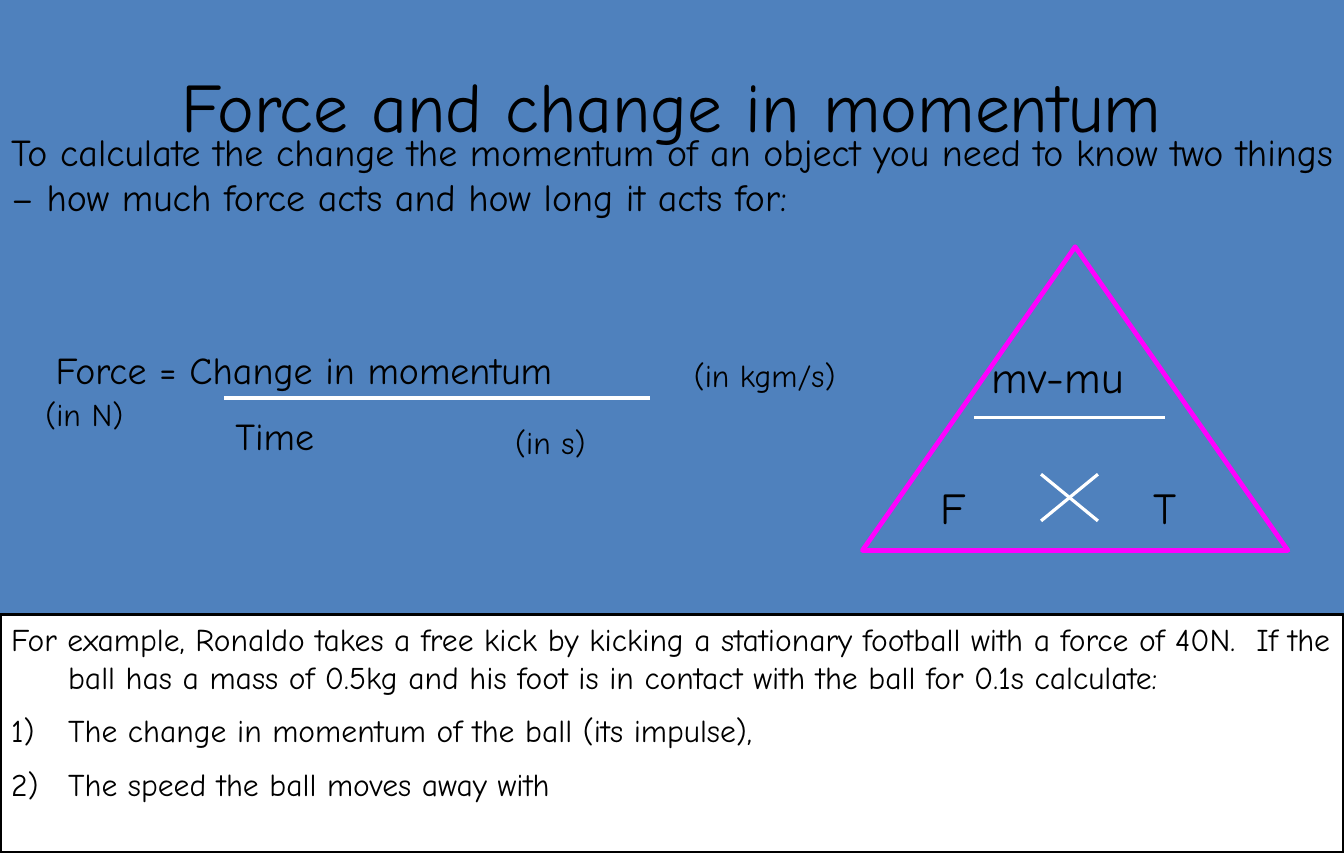
import pptx
import pptx.dml.color
import pptx.enum.shapes
import pptx.enum.text
import pptx.oxml.ns
import pptx.util
from lxml import etree

Inches = pptx.util.Inches
Pt = pptx.util.Pt
SHAPE = pptx.enum.shapes.MSO_SHAPE

WIDTH, HEIGHT = 11 + 13 / 16, 7.5
FONT = "Comic Neue"
BLUE, BLACK, WHITE, MAGENTA = "4F81BD", "000000", "FFFFFF", "FF00FF"

TITLE = "Force and change in momentum"
INTRO = ("To calculate the change the momentum of an object you need to know two things "
         "– how much force acts and how long it acts for:")
EXAMPLE = ("For example, Ronaldo takes a free kick by kicking a stationary football with "
           "a force of 40N.  If the ball has a mass of 0.5kg and his foot is in contact "
           "with the ball for 0.1s calculate:")
QUESTIONS = ["The change in momentum of the ball (its impulse),",
             "The speed the ball moves away with"]

# Labels: text, (left, top, width, height), size
TRIANGLE_LABELS = [
    ("mv-mu", (8.62, 3.02, 1.62, 0.57), 28),
    ("T", (10.04, 4.17, 1.18, 0.57), 28),
    ("F", (8.17, 4.17, 1.18, 0.57), 28),
]
EQUATION_LABELS = [
    ("Force = Change in momentum", (0.39, 3, 5.71, 0.5), 24),
    ("Time", (1.97, 3.58, 3.74, 0.5), 24),
    ("(in N)", (0.3, 3.42, 1.38, 0.43), 20),
    ("(in kgm/s)", (6, 3.08, 1.97, 0.43), 20),
    ("(in s)", (4.43, 3.67, 1.38, 0.43), 20),
]
# Lines: start, end, width
TRIANGLE_LINES = [
    ((8.56, 3.67), (10.24, 3.67), 2),
    ((9.15, 4.58), (9.65, 4.17), 2),
    ((9.65, 4.58), (9.15, 4.17), 2),
]
EQUATION_LINES = [((1.97, 3.5), (5.71, 3.5), 2.5)]


def color(value):
    return pptx.dml.color.RGBColor.from_string(value)


def inches(values):
    return [Inches(value) for value in values]


def write(paragraph, text, size):
    paragraph.text = text
    paragraph.font.name = FONT
    paragraph.font.size = Pt(size)
    paragraph.font.color.rgb = color(BLACK)


def add_label(shapes, text, box, size):
    frame = shapes.add_textbox(*inches(box)).text_frame
    frame.word_wrap = True
    frame.margin_right = Inches(0.05)
    write(frame.paragraphs[0], text, size)


def add_line(shapes, start, end, width):
    line = shapes.add_connector(pptx.enum.shapes.MSO_CONNECTOR.STRAIGHT,
                                *inches(start + end))
    line.line.color.rgb = color(WHITE)
    line.line.width = Pt(width)
    properties = line._element.spPr
    etree.SubElement(properties, pptx.oxml.ns.qn("a:effectLst"))


def add_outlined(shapes, kind, box, line_color, line_width):
    shape = shapes.add_shape(kind, *inches(box))
    shape.shadow.inherit = False
    shape.fill.background()
    shape.line.color.rgb = color(line_color)
    shape.line.width = Pt(line_width)
    return shape


def add_diagram(shapes, labels, lines):
    for label in labels:
        add_label(shapes, *label)
    for line in lines:
        add_line(shapes, *line)


def add_example(shapes):
    box = add_outlined(shapes, SHAPE.RECTANGLE, (0, 5.4, WIDTH, 2.1), BLACK, 2)
    box.fill.solid()
    box.fill.fore_color.rgb = color(WHITE)
    frame = box.text_frame
    frame.word_wrap = True
    frame.vertical_anchor = pptx.enum.text.MSO_ANCHOR.TOP
    for index, text in enumerate([EXAMPLE] + QUESTIONS):
        paragraph = frame.add_paragraph() if index else frame.paragraphs[0]
        write(paragraph, text, 20)
        paragraph.alignment = pptx.enum.text.PP_ALIGN.LEFT
        properties = paragraph._p.get_or_add_pPr()
        properties.set("marL", str(Inches(0.5)))
        properties.set("indent", str(Inches(-0.5)))
        if index:
            paragraph.space_before = Pt(10)
            number = etree.Element(pptx.oxml.ns.qn("a:buAutoNum"), type="arabicParenR")
            properties.find(pptx.oxml.ns.qn("a:defRPr")).addprevious(number)


def main():
    presentation = pptx.Presentation()
    presentation.slide_width = Inches(WIDTH)
    presentation.slide_height = Inches(HEIGHT)
    slide = presentation.slides.add_slide(presentation.slide_layouts[5])
    slide.background.fill.solid()
    slide.background.fill.fore_color.rgb = color(BLUE)

    title = slide.shapes.title
    title.left, title.top, title.width, title.height = inches((0.59, 0.3, 10.63, 1.25))
    title.text_frame.vertical_anchor = pptx.enum.text.MSO_ANCHOR.MIDDLE
    write(title.text_frame.paragraphs[0], TITLE, 44)
    title.text_frame.paragraphs[0].alignment = pptx.enum.text.PP_ALIGN.CENTER

    add_label(slide.shapes, INTRO, (0, 1.08, WIDTH, 0.91), 24)

    triangle = slide.shapes.add_group_shape().shapes
    add_outlined(triangle, SHAPE.FLOWCHART_EXTRACT, (7.58, 2.17, 3.74, 2.67), MAGENTA, 3)
    add_diagram(triangle, TRIANGLE_LABELS, TRIANGLE_LINES)

    equation = slide.shapes.add_group_shape().shapes
    add_diagram(equation, EQUATION_LABELS, EQUATION_LINES)

    add_example(slide.shapes)
    presentation.save("out.pptx")


if __name__ == "__main__":
    main()
